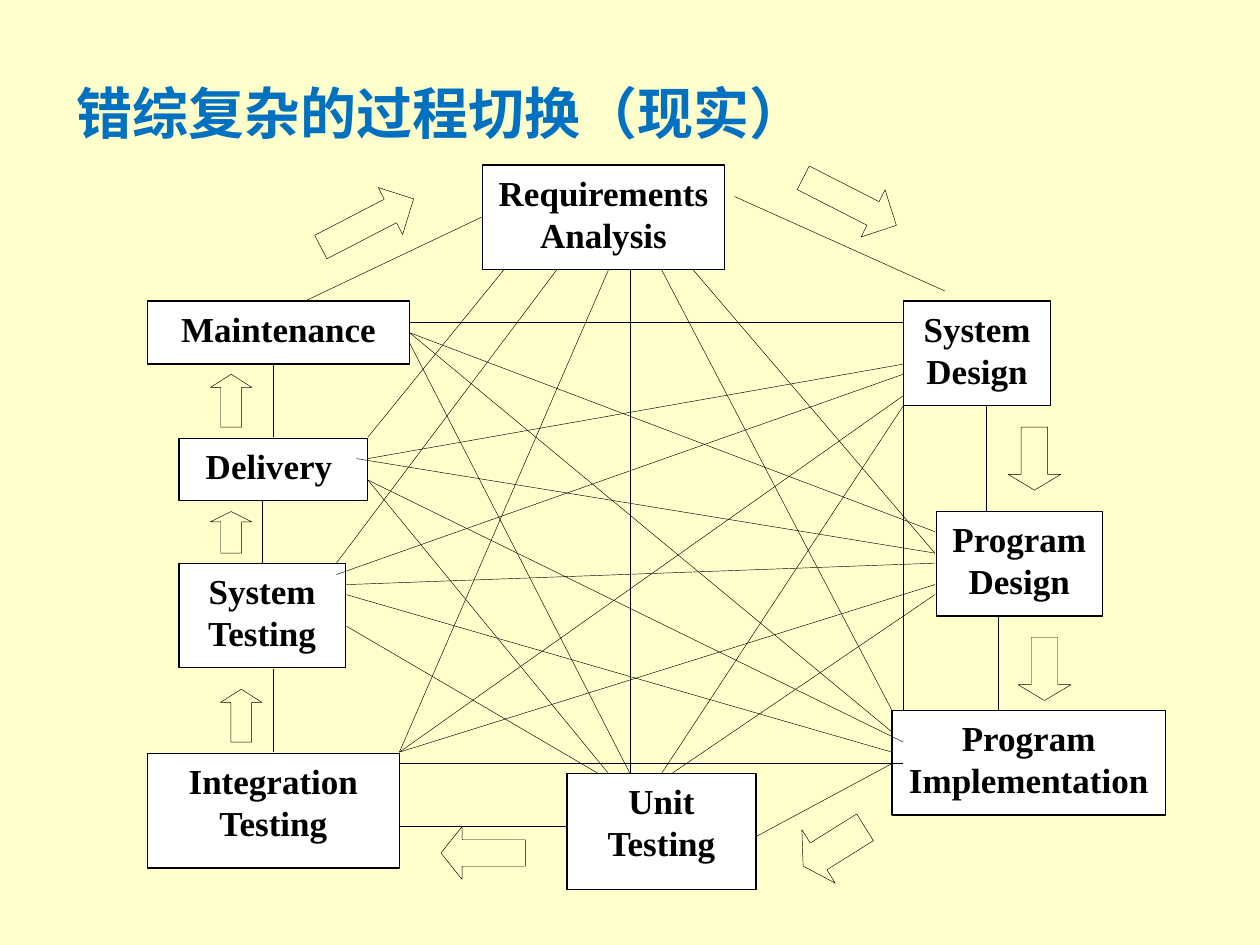
from dataclasses import dataclass

from lxml.etree import SubElement
from pptx import Presentation
from pptx.dml.color import RGBColor as RGB
from pptx.enum.shapes import MSO_CONNECTOR as Link, MSO_SHAPE as Kind
from pptx.enum.text import MSO_ANCHOR as Anchor, MSO_AUTO_SIZE as Fit, PP_ALIGN as Align
from pptx.oxml.ns import qn
from pptx.util import Inches, Pt


@dataclass(frozen=True)
class Theme:
    back: RGB = RGB(0xFF, 0xFF, 0xCC)
    card: RGB = RGB(0xFF, 0xFF, 0xFF)
    ink: RGB = RGB(0, 0, 0)
    blue: RGB = RGB(0x00, 0x70, 0xC0)
    head: int = 32
    body: int = 20
    edge: float = 0.75
    thin: float = 0.25
    cjk: str = "Noto Sans CJK SC"
    serif: str = "Times New Roman"


@dataclass(frozen=True)
class Box:
    left: float
    top: float
    width: float
    height: float

    def spot(self, x, y):
        return Inches(self.left + x), Inches(self.top + y)


THEME = Theme()

STAGES = [
    ("Requirements Analysis", 2.83, 0.31, 1.92, 0.83),
    ("System Design", 6.17, 1.39, 1.17, 0.83),
    ("Program Design", 6.43, 3.06, 1.32, 0.83),
    ("Unit Testing", 3.5, 5.14, 1.5, 0.92),
    ("Integration Testing", 0.17, 4.98, 2, 0.91),
    ("Delivery ", 0.42, 2.48, 1.5, 0.49),
    ("Program Implementation", 6.08, 4.64, 2.17, 0.83),
    ("System Testing", 0.42, 3.47, 1.32, 0.83),
    ("Maintenance", 0.17, 1.39, 2.08, 0.5),
]

RING = [
    (1.42, 1.39, 2.83, 0.72), (4.83, 0.56, 6.5, 1.31), (6.83, 2.22, 6.83, 3.06),
    (6.92, 3.89, 6.92, 4.64), (6.08, 5.06, 5, 5.64), (3.5, 5.56, 2.17, 5.56),
    (1.17, 4.97, 1.17, 4.31), (1.08, 3.47, 1.08, 2.97), (1.17, 2.47, 1.17, 1.89),
]

JUMPS = [
    (3, 1.14, 1.92, 2.47), (3.42, 1.14, 1.67, 3.47), (3.83, 1.14, 2.17, 4.97),
    (4, 1.14, 4, 5.14), (4.25, 1.14, 6.08, 4.64), (4.5, 1.14, 6.42, 3.39),
    (6.17, 1.56, 2.25, 1.56), (6.17, 1.89, 1.92, 2.64), (6.42, 3.47, 1.75, 3.64),
    (6.17, 1.97, 1.67, 3.56), (6.17, 2.14, 2.17, 4.97), (6.17, 2.22, 4.25, 5.14),
    (6.17, 2.22, 6.17, 4.64), (6.42, 3.22, 2.25, 1.64), (6.42, 3.39, 1.83, 2.64),
    (6.42, 3.64, 2.17, 4.97), (6.42, 3.72, 4.33, 5.14), (6.08, 4.81, 2.25, 1.64),
    (6.17, 4.89, 1.92, 2.81), (6.08, 4.97, 1.75, 3.72), (6.17, 5.06, 2.17, 5.06),
    (4, 5.14, 2.25, 1.72), (3.83, 5.14, 1.92, 2.81), (3.75, 5.14, 1.75, 3.97),
]

ARROWS = [
    (Kind.RIGHT_ARROW, 5.33, 0.39, 0.83, 0.42, 27),
    (Kind.DOWN_ARROW, 7.08, 4.06, 0.42, 0.5, 0),
    (Kind.DOWN_ARROW, 7, 2.39, 0.42, 0.5, 0),
    (Kind.LEFT_ARROW, 5.33, 5.47, 0.58, 0.5, 328),
    (Kind.LEFT_ARROW, 2.5, 5.56, 0.67, 0.42, 0),
    (Kind.UP_ARROW, 0.75, 4.47, 0.33, 0.42, 0),
    (Kind.UP_ARROW, 0.67, 3.06, 0.33, 0.33, 0),
    (Kind.UP_ARROW, 0.67, 1.97, 0.33, 0.42, 0),
    (Kind.RIGHT_ARROW, 1.5, 0.56, 0.83, 0.42, 332.6),
]


def write(shape, text, *, size, font, color, align, anchor):
    frame = shape.text_frame
    frame.word_wrap = True
    frame.auto_size = Fit.NONE
    frame.vertical_anchor = anchor
    para = frame.paragraphs[0]
    para.alignment = align
    run = para.add_run()
    run.text = text
    run.font.size = Pt(size)
    run.font.bold = True
    run.font.name = font
    run.font.color.rgb = color
    SubElement(run.font._element, qn("a:ea"), typeface=font)


def add_title(slide, box, text):
    title = slide.shapes.title
    title.left, title.top = box.spot(0, 0)
    title.width, title.height = Inches(box.width), Inches(box.height)
    write(title, text, size=THEME.head, font=THEME.cjk, color=THEME.blue,
          align=Align.LEFT, anchor=Anchor.MIDDLE)


def add_form(slide, box, kind, x, y, width, height, weight):
    form = slide.shapes.add_shape(kind, *box.spot(x, y), Inches(width), Inches(height))
    form.shadow.inherit = False
    form.line.color.rgb = THEME.ink
    form.line.width = Pt(weight)
    return form


def add_stages(slide, box):
    for name, *area in STAGES:
        card = add_form(slide, box, Kind.RECTANGLE, *area, THEME.edge)
        card.fill.solid()
        card.fill.fore_color.rgb = THEME.card
        write(card, name, size=THEME.body, font=THEME.serif, color=THEME.ink,
              align=Align.CENTER, anchor=Anchor.TOP)


def add_links(slide, box):
    for x1, y1, x2, y2 in RING + JUMPS:
        link = slide.shapes.add_connector(Link.STRAIGHT, *box.spot(x1, y1), *box.spot(x2, y2))
        link.line.color.rgb = THEME.ink
        link.line.width = Pt(THEME.thin)
        SubElement(link._element.spPr, qn("a:effectLst"))


def add_arrows(slide, box):
    for kind, x, y, width, height, turn in ARROWS:
        arrow = add_form(slide, box, kind, x, y, width, height, THEME.thin)
        arrow.fill.background()
        arrow.rotation = turn
        span = height if kind in (Kind.UP_ARROW, Kind.DOWN_ARROW) else width
        arrow.adjustments[1] = span / 4 / min(width, height)


def main():
    deck = Presentation()
    deck.slide_width, deck.slide_height = Inches(10), Inches(7.5)
    slide = deck.slides.add_slide(deck.slide_layouts[5])
    slide.background.fill.solid()
    slide.background.fill.fore_color.rgb = THEME.back
    add_title(slide, Box(0.51, 0.57, 7.7, 0.64), "错综复杂的过程切换（现实）")
    web = Box(1, 1, 8.25, 6.06)
    add_stages(slide, web)
    add_links(slide, web)
    add_arrows(slide, web)
    deck.save("out.pptx")


if __name__ == "__main__":
    main()
